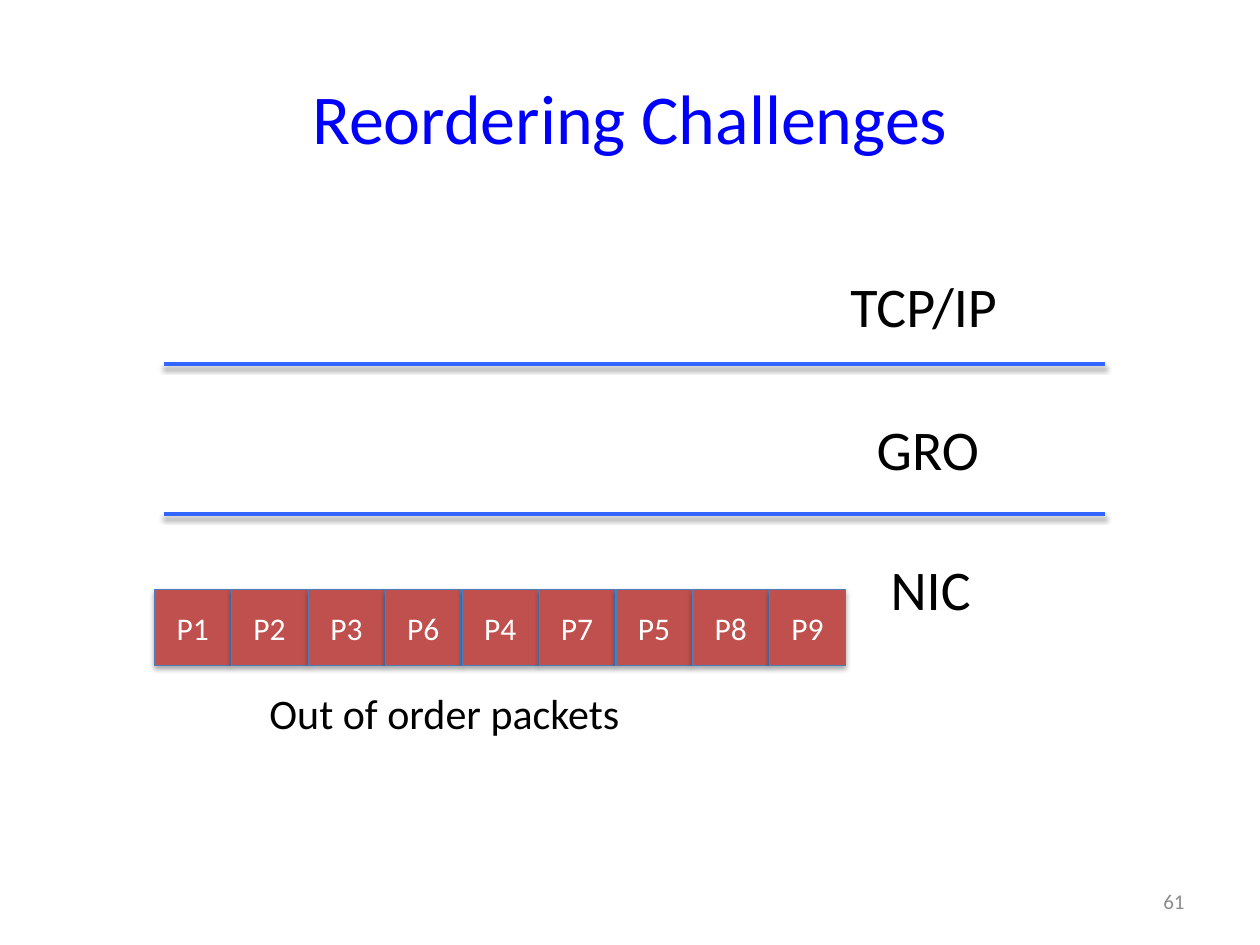
from pptx import Presentation
from pptx.dml.color import RGBColor
from pptx.enum.shapes import MSO_CONNECTOR, MSO_SHAPE
from pptx.enum.text import MSO_ANCHOR, PP_ALIGN
from pptx.util import Inches, Pt

RECTANGLE = MSO_SHAPE.RECTANGLE
STRAIGHT = MSO_CONNECTOR.STRAIGHT
MIDDLE = MSO_ANCHOR.MIDDLE
LEFT, CENTER, RIGHT = PP_ALIGN.LEFT, PP_ALIGN.CENTER, PP_ALIGN.RIGHT

FONT = "Calibri"
COLORS = {
    "title": "0000FF",
    "text": "000000",
    "page": "8C8C8C",
    "packet": "C0504D",
    "packet_edge": "4B7EBC",
    "packet_text": "FFFFFF",
    "boundary": "3366FF",
}

TITLE = "Reordering Challenges"
PAGE_NUMBER = "61"
PACKETS = ["P1", "P2", "P3", "P6", "P4", "P7", "P5", "P8", "P9"]
LABELS = [  # text, font size, (left, top, width, height)
    ("TCP/IP", 32, (6.65, 2.11, 1.41, 0.64)),
    ("GRO", 32, (6.86, 3.24, 1.03, 0.64)),
    ("NIC", 32, (6.97, 4.35, 0.84, 0.64)),
    ("Out of order packets", 24, (2.04, 5.41, 3.02, 0.5)),
]

PACKET_LEFT, PACKET_TOP, PACKET_SIZE, PACKET_PITCH = 1.23, 4.68, 0.6, 0.61
BOUNDARY_LEFT, BOUNDARY_RIGHT = 1.3, 8.77
BOUNDARY_HEIGHTS = [2.89, 4.08]


def rgb(name):
    return RGBColor.from_string(COLORS[name])


def write(shape, text, size, color, align):
    shape.text_frame.text = text
    paragraph = shape.text_frame.paragraphs[0]
    paragraph.alignment = align
    paragraph.font.name = FONT
    paragraph.font.size = Pt(size)
    paragraph.font.color.rgb = rgb(color)


def add_title(slide):
    title = slide.shapes.title
    title.left, title.top, title.width, title.height = map(Inches, (0.5, 0.3, 9, 1.25))
    title.text_frame.vertical_anchor = MIDDLE
    write(title, TITLE, 40, "title", CENTER)


def add_page_number(slide):
    page = slide.shapes.add_textbox(*map(Inches, (7.17, 6.95, 2.33, 0.4)))
    page.text_frame.word_wrap = True
    page.text_frame.vertical_anchor = MIDDLE
    write(page, PAGE_NUMBER, 12, "page", RIGHT)


def add_packets(slide):
    """Draw the packet row; packets keep the theme's soft shadow."""
    for i, name in enumerate(PACKETS):
        box = (PACKET_LEFT + i * PACKET_PITCH, PACKET_TOP, PACKET_SIZE, PACKET_SIZE)
        packet = slide.shapes.add_shape(RECTANGLE, *map(Inches, box))
        packet.fill.solid()
        packet.fill.fore_color.rgb = rgb("packet")
        packet.line.color.rgb = rgb("packet_edge")
        packet.line.width = Pt(0.75)
        packet.text_frame.vertical_anchor = MIDDLE
        write(packet, name, 18, "packet_text", CENTER)


def add_boundaries(slide):
    """Draw the lines between layers; they keep the theme's soft shadow."""
    for y in BOUNDARY_HEIGHTS:
        ends = (BOUNDARY_LEFT, y, BOUNDARY_RIGHT, y)
        boundary = slide.shapes.add_connector(STRAIGHT, *map(Inches, ends))
        boundary.line.color.rgb = rgb("boundary")
        boundary.line.width = Pt(2)


def add_labels(slide):
    for text, size, box in LABELS:
        label = slide.shapes.add_textbox(*map(Inches, box))
        label.text_frame.word_wrap = False
        write(label, text, size, "text", LEFT)


def main():
    prs = Presentation()
    prs.slide_width, prs.slide_height = Inches(10), Inches(7.5)
    slide = prs.slides.add_slide(prs.slide_layouts[5])
    add_title(slide)
    add_page_number(slide)
    add_packets(slide)
    add_boundaries(slide)
    add_labels(slide)
    prs.save("out.pptx")


if __name__ == "__main__":
    main()
